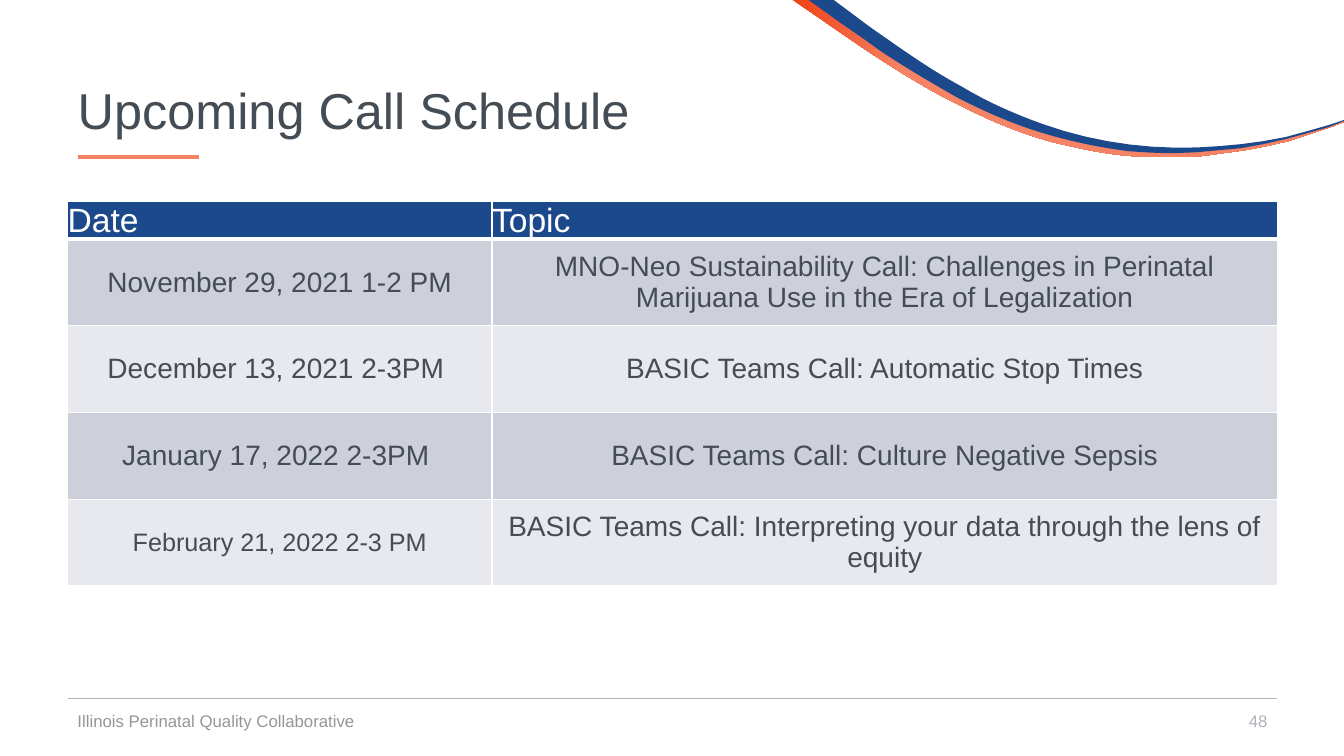
from lxml.etree import SubElement
from pptx import Presentation
from pptx.dml.color import RGBColor
from pptx.enum.shapes import MSO_CONNECTOR
from pptx.enum.text import MSO_ANCHOR, MSO_AUTO_SIZE, PP_ALIGN
from pptx.oxml.ns import qn
from pptx.util import Inches, Pt

COLORS = {
    "ink": "444C55", "navy": "1C498B", "coral": "F58366", "red": "F04115",
    "rule": "AFB3B9", "footer": "949699", "white": "FFFFFF",
    "band_dark": "CDD0DA", "band_light": "E8E9EE",
}

# Wave outlines: two numbers are a straight step, six are a cubic curve
CORAL_WAVE = [
    (7.86, 0), (8.05, 0), (8.1, 0.04),
    (8.34, 0.21, 8.58, 0.38, 8.82, 0.54), (9.07, 0.71, 9.32, 0.86, 9.58, 0.99),
    (9.84, 1.13, 10.11, 1.24, 10.39, 1.33), (10.52, 1.38, 10.67, 1.41, 10.81, 1.44),
    (10.95, 1.47, 11.1, 1.49, 11.25, 1.5), (11.39, 1.52, 11.54, 1.52, 11.68, 1.52),
    (11.9, 1.51), (12.12, 1.49), (12.34, 1.47), (12.56, 1.43), (12.77, 1.38),
    (12.99, 1.32), (13.2, 1.25), (13.33, 1.2), (13.33, 1.21), (13.2, 1.26),
    (12.99, 1.33), (12.78, 1.4), (12.56, 1.45), (12.35, 1.49), (12.13, 1.52),
    (11.91, 1.55), (11.69, 1.56),
    (11.54, 1.56, 11.39, 1.56, 11.24, 1.55), (11.1, 1.54, 10.95, 1.52, 10.8, 1.49),
    (10.66, 1.46, 10.51, 1.43, 10.37, 1.39), (10.09, 1.31, 9.81, 1.19, 9.55, 1.06),
    (9.28, 0.93, 9.03, 0.78, 8.78, 0.62), (8.53, 0.46, 8.29, 0.29, 8.04, 0.12),
]
NAVY_WAVE = [
    (8.02, 0), (8.27, 0), (8.43, 0.12),
    (8.55, 0.21, 8.67, 0.3, 8.79, 0.38), (9.03, 0.55, 9.28, 0.72, 9.54, 0.86),
    (9.79, 1.01, 10.06, 1.13, 10.34, 1.23), (10.9, 1.43, 11.5, 1.5, 12.09, 1.45),
    (12.31, 1.43), (12.53, 1.4), (12.75, 1.36), (12.97, 1.3), (13.18, 1.24),
    (13.33, 1.19), (13.33, 1.2), (13.18, 1.26), (12.97, 1.32), (12.75, 1.38),
    (12.53, 1.43), (12.31, 1.47), (12.09, 1.49), (11.87, 1.51), (11.64, 1.52),
    (11.49, 1.52, 11.34, 1.51, 11.19, 1.5), (10.89, 1.46, 10.6, 1.4, 10.31, 1.31),
    (10.02, 1.22, 9.75, 1.1, 9.48, 0.96), (9.22, 0.81, 8.96, 0.66, 8.71, 0.49),
    (8.59, 0.4, 8.47, 0.32, 8.34, 0.23),
]

# Each row: date, date size, topic
CALLS = [
    ("November 29, 2021 1-2 PM", 20,
     "MNO-Neo Sustainability Call: Challenges in Perinatal Marijuana Use in the Era of Legalization"),
    ("December 13, 2021 2-3PM ", 20, "BASIC Teams Call: Automatic Stop Times"),
    ("January 17, 2022 2-3PM ", 20, "BASIC Teams Call: Culture Negative Sepsis"),
    ("February 21, 2022 2-3 PM", 18,
     "BASIC Teams Call: Interpreting your data through the lens of equity"),
]


def color(name):
    return RGBColor.from_string(COLORS[name])


def trace(outline, steps=8):
    """Turn straight steps and cubic curves into a list of points."""
    points = [outline[0]]
    for step in outline[1:]:
        if len(step) == 2:
            points.append(step)
            continue
        corners = [points[-1], step[:2], step[2:4], step[4:]]
        for index in range(1, steps + 1):
            t = index / steps
            weights = ((1 - t) ** 3, 3 * t * (1 - t) ** 2, 3 * t * t * (1 - t), t ** 3)
            points.append(tuple(sum(weight * corner[axis] for weight, corner in zip(weights, corners))
                                for axis in (0, 1)))
    return points


class SchedulePage:
    font = "Arial"

    def __init__(self, deck):
        self.page = deck.slides.add_slide(deck.slide_layouts[5])
        self.shapes = self.page.shapes

    def set_text(self, frame, text, size, tint, align=PP_ALIGN.LEFT):
        para = frame.paragraphs[0]
        para.text = text
        para.alignment = align
        para.font.name = self.font
        para.font.size = Pt(size)
        para.font.color.rgb = color(tint)
        return para

    def wave(self, outline, tint, start_tint=None):
        points = [(Inches(x), Inches(y)) for x, y in trace(outline)]
        builder = self.shapes.build_freeform(*points[0], scale=1.0)
        builder.add_line_segments(points[1:], close=True)
        shape = builder.convert_to_shape()
        shape.shadow.inherit = False
        shape.line.fill.background()
        if start_tint is None:
            shape.fill.solid()
            shape.fill.fore_color.rgb = color(tint)
            return
        shape.fill.gradient()
        shape.fill.gradient_angle = 0
        for stop, name, position in zip(shape.fill.gradient_stops, (start_tint, tint), (0, 0.2)):
            stop.color.rgb = color(name)
            stop.position = position

    def rule(self, left, right, top, tint, width):
        line = self.shapes.add_connector(
            MSO_CONNECTOR.STRAIGHT, Inches(left), Inches(top), Inches(right), Inches(top))
        line.line.color.rgb = color(tint)
        line.line.width = Pt(width)
        SubElement(line._element.spPr, qn("a:effectLst"))

    def title(self, text):
        box = self.shapes.title
        box.left, box.top, box.width, box.height = map(Inches, (0.67, 0.4, 12, 1.45))
        frame = box.text_frame
        frame.auto_size = MSO_AUTO_SIZE.NONE
        frame.vertical_anchor = MSO_ANCHOR.MIDDLE
        self.set_text(frame, text, 36, "ink").line_spacing = 0.9

    def label(self, left, width, text, tint, align=PP_ALIGN.LEFT):
        box = self.shapes.add_textbox(Inches(left), Inches(6.95), Inches(width), Inches(0.4))
        box.text_frame.word_wrap = True
        box.text_frame.vertical_anchor = MSO_ANCHOR.MIDDLE
        self.set_text(box.text_frame, text, 12, tint, align)

    def cell(self, cell, text, size, tint, fill, align, bottom=1):
        cell.margin_left = cell.margin_right = cell.margin_top = cell.margin_bottom = 0
        cell.vertical_anchor = MSO_ANCHOR.MIDDLE
        self.set_text(cell.text_frame, text, size, tint, align)
        # Borders come before the fill in the cell properties
        properties = cell._tc.get_or_add_tcPr()
        for side, width in (("L", 1), ("R", 1), ("T", 1), ("B", bottom)):
            border = SubElement(properties, qn(f"a:ln{side}"), w=str(Pt(width)))
            paint = SubElement(border, qn("a:solidFill"))
            SubElement(paint, qn("a:srgbClr"), val=COLORS["white"])
        cell.fill.solid()
        cell.fill.fore_color.rgb = color(fill)

    def schedule(self, headings, calls):
        table = self.shapes.add_table(
            len(calls) + 1, 2, Inches(0.67), Inches(2), Inches(12), Inches(3.79)).table
        for column, width in zip(table.columns, (4.21, 7.79)):
            column.width = Inches(width)
        for index, row in enumerate(table.rows):
            row.height = Inches(0.86 if index else 0.35)
        for column, heading in enumerate(headings):
            self.cell(table.cell(0, column), heading, 24, "white", "navy", PP_ALIGN.LEFT, bottom=3)
        for row, (date, date_size, topic) in enumerate(calls, start=1):
            band = "band_dark" if row % 2 else "band_light"
            for column, (text, size) in enumerate(((date, date_size), (topic, 20))):
                self.cell(table.cell(row, column), text, size, "ink", band, PP_ALIGN.CENTER)


def main():
    deck = Presentation()
    deck.slide_width, deck.slide_height = Inches(13.33), Inches(7.5)
    page = SchedulePage(deck)

    # Corner waves and rules
    page.wave(CORAL_WAVE, "coral", start_tint="red")
    page.wave(NAVY_WAVE, "navy")
    page.rule(0.67, 12.67, 6.93, "rule", 0.5)
    page.rule(0.77, 1.97, 1.56, "coral", 2.5)

    # Title and call schedule
    page.title("Upcoming Call Schedule")
    page.schedule(("Date", "Topic"), CALLS)

    # Footer
    page.label(9.67, 3, "48", "rule", PP_ALIGN.RIGHT)
    page.label(0.67, 4.5, "Illinois Perinatal Quality Collaborative", "footer")

    deck.save("out.pptx")


if __name__ == "__main__":
    main()
